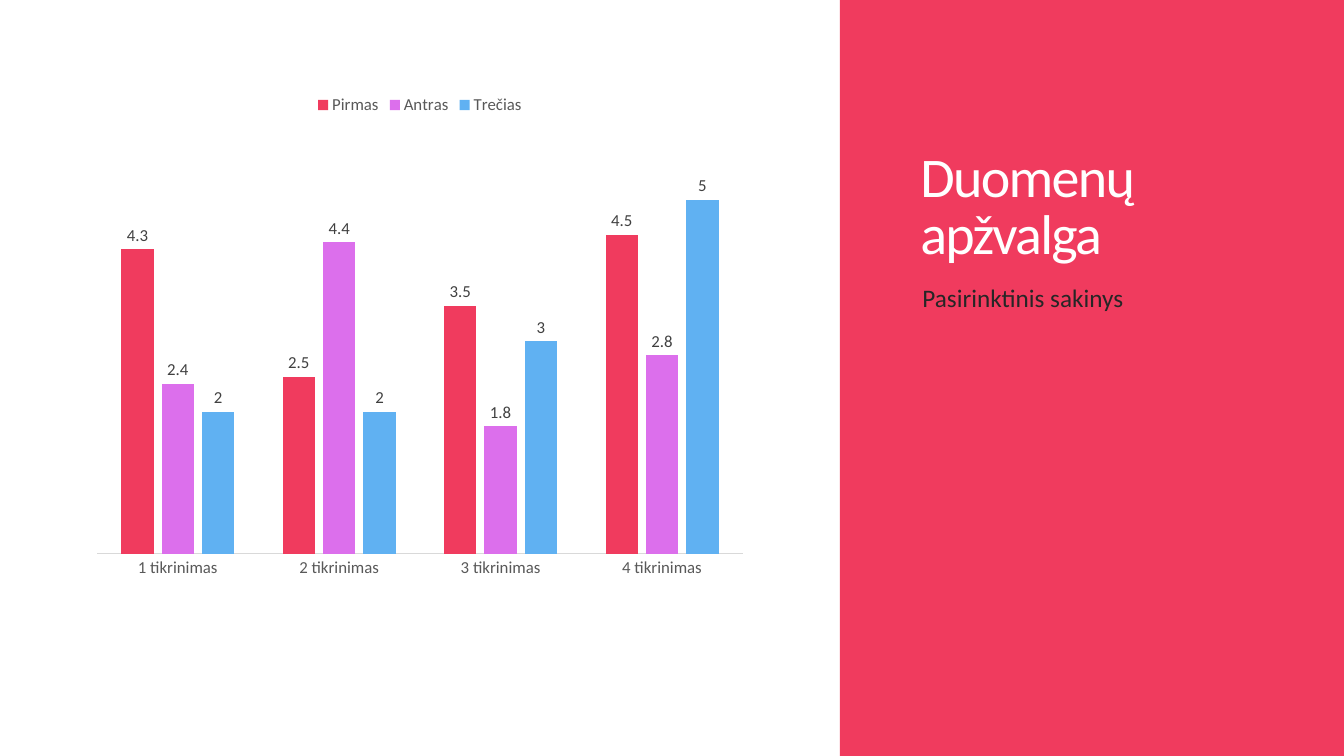
from dataclasses import dataclass

from pptx import Presentation
from pptx import util as u
from pptx.chart import data as chart_data
from pptx.dml import color as dml
from pptx.enum import chart as charts, shapes, text

FONT = "Calibri"
WHITE, RED, PURPLE, BLUE = "FFFFFF", "F03B5E", "DC6FEC", "60B1F2"
INK, LABEL_GREY, AXIS_GREY, LINE_GREY = "262626", "404040", "595959", "D9D9D9"


@dataclass
class Box:
    left: float
    top: float
    width: float
    height: float

    def lengths(self):
        return [u.Inches(n) for n in (self.left, self.top, self.width, self.height)]


@dataclass
class Series:
    name: str
    values: tuple[float, ...]
    color: str


CATEGORIES = [f"{number} tikrinimas" for number in range(1, 5)]
SERIES = [
    Series("Pirmas", (4.3, 2.5, 3.5, 4.5), RED),
    Series("Antras", (2.4, 4.4, 1.8, 2.8), PURPLE),
    Series("Trečias", (2, 2, 3, 5), BLUE),
]


def rgb(value: str) -> dml.RGBColor:
    return dml.RGBColor.from_string(value)


def paint(fill, color: str) -> None:
    fill.solid()
    fill.fore_color.rgb = rgb(color)


def style_font(font, size: float, color: str) -> None:
    font.name = FONT
    font.size = u.Pt(size)
    font.color.rgb = rgb(color)


def add_text(slide, box: Box, words: str, *, size: float, color: str,
             anchor=text.MSO_ANCHOR.TOP, line_spacing: float = 1.0,
             space_before: float = 0, tracking: float = 0) -> None:
    frame = slide.shapes.add_textbox(*box.lengths()).text_frame
    frame.word_wrap = True
    frame.vertical_anchor = anchor
    paragraph = frame.paragraphs[0]
    paragraph.line_spacing = line_spacing
    paragraph.space_before = u.Pt(space_before)
    run = paragraph.add_run()
    run.text = words
    style_font(run.font, size, color)
    if tracking:
        run.font._element.set("spc", str(round(tracking * 100)))


def add_panel(slide, box: Box, color: str) -> None:
    shape = slide.shapes.add_shape(shapes.MSO_SHAPE.RECTANGLE, *box.lengths())
    shape.shadow.inherit = False
    paint(shape.fill, color)
    shape.line.fill.background()


def add_column_chart(slide, box: Box) -> None:
    data = chart_data.CategoryChartData()
    data.categories = CATEGORIES
    for series in SERIES:
        data.add_series(series.name, series.values)
    chart = slide.shapes.add_chart(
        charts.XL_CHART_TYPE.COLUMN_CLUSTERED, *box.lengths(), data).chart
    chart.has_title = False
    style_font(chart.font, 10, "000000")

    # Legend
    chart.has_legend = True
    chart.legend.position = charts.XL_LEGEND_POSITION.TOP
    chart.legend.include_in_layout = False
    style_font(chart.legend.font, 12, AXIS_GREY)

    # Axes
    axis = chart.category_axis
    axis.major_tick_mark = charts.XL_TICK_MARK.NONE
    style_font(axis.tick_labels.font, 12, AXIS_GREY)
    axis.format.line.color.rgb = rgb(LINE_GREY)
    axis.format.line.width = u.Pt(0.75)
    chart.value_axis.visible = False
    chart.value_axis.has_major_gridlines = False
    chart.value_axis.minimum_scale = 0
    chart.value_axis.maximum_scale = 6

    # Columns and their values
    plot = chart.plots[0]
    plot.gap_width = 150
    plot.overlap = -25
    plot.vary_by_categories = False
    for column, series in zip(plot.series, SERIES):
        paint(column.format.fill, series.color)
        column.invert_if_negative = False
        labels = column.data_labels
        labels.show_value = True
        labels.position = charts.XL_LABEL_POSITION.OUTSIDE_END
        style_font(labels.font, 12, LABEL_GREY)


def main() -> None:
    presentation = Presentation()
    presentation.slide_width = u.Inches(13.33)
    presentation.slide_height = u.Inches(7.5)
    slide = presentation.slides.add_slide(presentation.slide_layouts[6])
    paint(slide.background.fill, WHITE)

    # Side panel with title and subtitle
    add_panel(slide, Box(8.33, 0, 5, 7.5), RED)
    add_text(slide, Box(9.03, 0.59, 3.7, 2.1), "Duomenų apžvalga", size=40,
             color=WHITE, anchor=text.MSO_ANCHOR.BOTTOM, line_spacing=0.85,
             tracking=-1.2)
    add_text(slide, Box(9.05, 2.75, 3.72, 3.42), "Pasirinktinis sakinys",
             size=18, color=INK, space_before=12)

    # Chart
    add_column_chart(slide, Box(0.83, 0.83, 6.67, 5))
    presentation.save("out.pptx")


if __name__ == "__main__":
    main()
